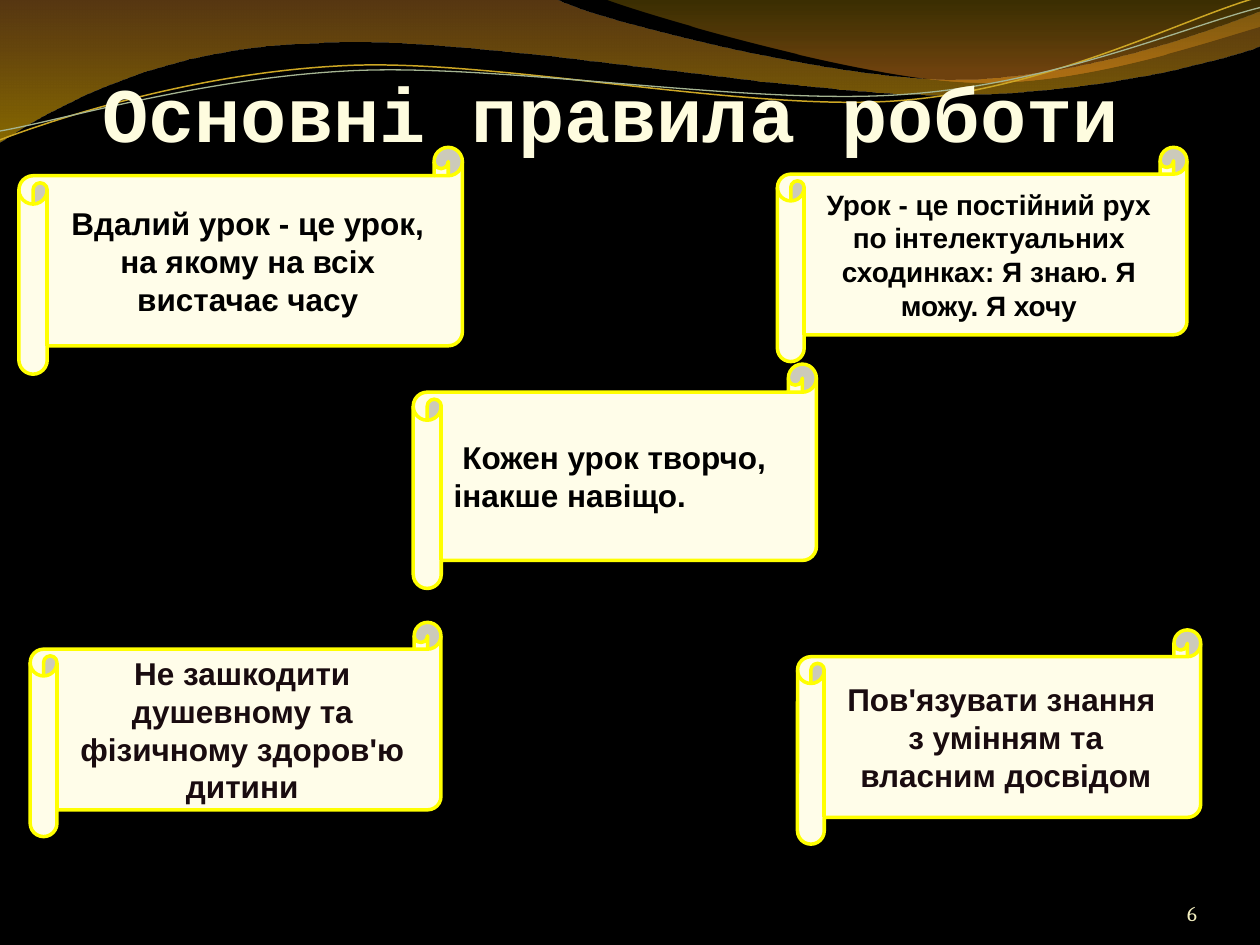
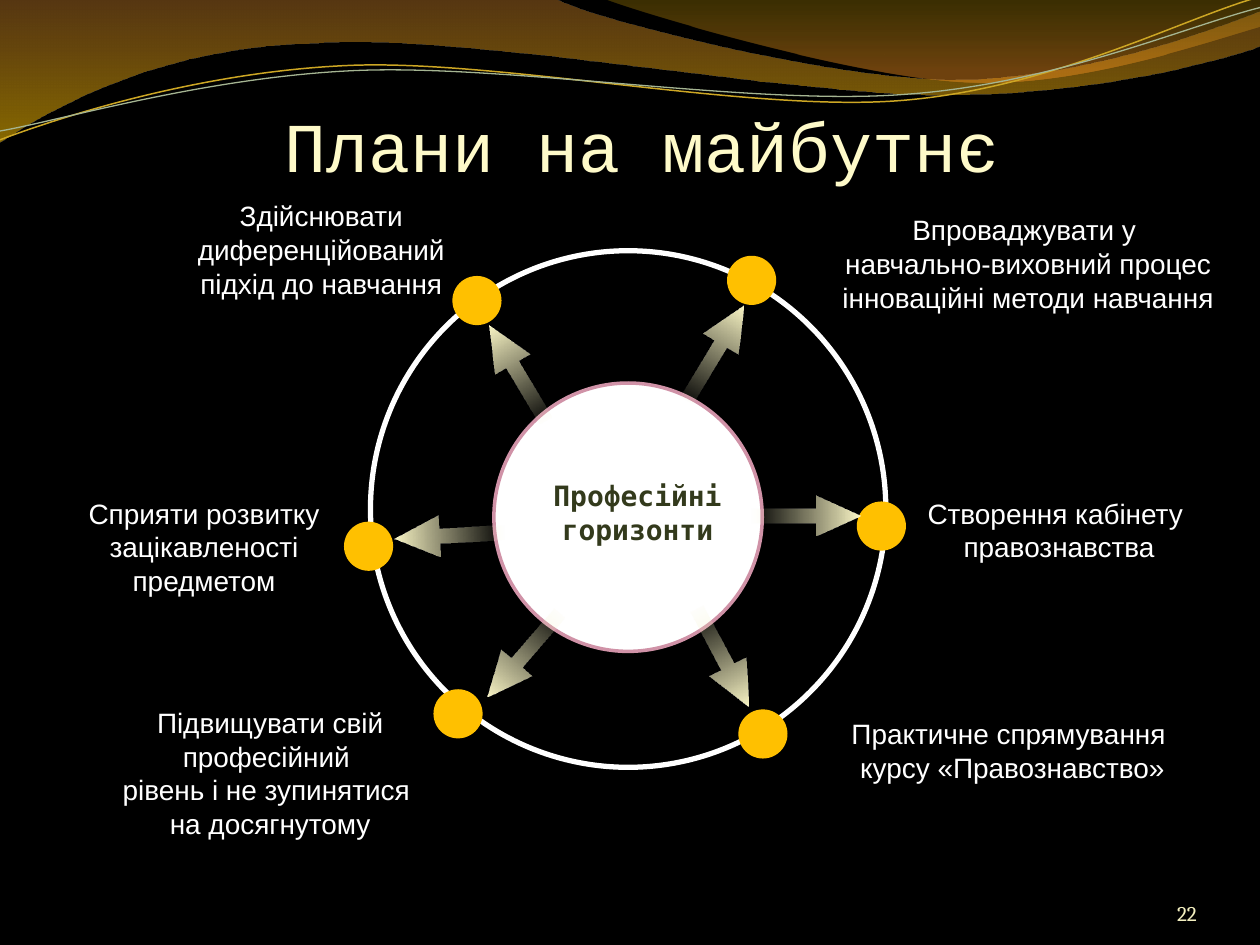
from lxml import etree
from pptx import Presentation
from pptx.dml.color import RGBColor
from pptx.enum.shapes import MSO_SHAPE
from pptx.enum.text import MSO_ANCHOR, MSO_AUTO_SIZE, PP_ALIGN
from pptx.oxml.ns import qn
from pptx.util import Inches, Pt

SCROLL, OVAL, ARROW = MSO_SHAPE.HORIZONTAL_SCROLL, MSO_SHAPE.OVAL, MSO_SHAPE.RIGHT_ARROW
TOP, MIDDLE, BOTTOM = MSO_ANCHOR.TOP, MSO_ANCHOR.MIDDLE, MSO_ANCHOR.BOTTOM
LEFT, CENTER, RIGHT = PP_ALIGN.LEFT, PP_ALIGN.CENTER, PP_ALIGN.RIGHT
FIXED = MSO_AUTO_SIZE.NONE
TITLE_ONLY = 5
FIRST_WAVE_ID = 101

BLACK, WHITE, INK = "000000", "FFFFFF", "190B0F"
PAPER, YELLOW, AMBER = "FFFDE9", "FFFF00", "FFC000"
PINK, OLIVE, PAGE_COLOR = "D092A7", "333A1C", "F3EFC0"
BODY_FONT, TITLE_FONT, PAGE_FONT, HUB_FONT = "Arial", "Courier New", "Cambria", "DejaVu Sans Mono"

WIDE_BAND = [(0, 0), (4.4, -0.01),
             [(4.76, 0.17), (6.64, 0.63), (7.58, 0.63)],
             [(8.53, 0.63), (9.58, 0.26), (10, 0.09)], (10.01, 0.36),
             [(9.83, 0.44), (8.7, 0.76), (7.46, 0.75)],
             [(6.22, 0.75), (3.82, 0.28), (2.57, 0.34)],
             [(1.29, 0.36), (0.46, 0.83), (-0.01, 1.13)], (0, 0)]
RIGHT_BAND = [(4.79, -0.01),
              [(5.09, 0.11), (6.82, 0.62), (7.69, 0.65)],
              [(8.56, 0.69), (9.61, 0.32), (10, 0.21)], (10, 0), (4.79, -0.01)]
GOLD_WAVE = [(0, 1.11),
             [(0.48, 0.93), (1.58, 0.57), (2.77, 0.52)],
             [(3.95, 0.47), (5.93, 0.89), (7.13, 0.8)],
             [(8.33, 0.71), (9.38, 0.15), (9.98, -0.02)]]
GREEN_WAVE = [(0, 1.04),
              [(0.47, 0.96), (1.64, 0.61), (2.83, 0.56)],
              [(4.03, 0.51), (5.97, 0.84), (7.17, 0.75)],
              [(8.36, 0.67), (9.41, 0.21), (10, 0.06)]]
BANDS = [(WIDE_BAND, [(0, "C07A28", 45), (100, "F7BF00", 55)]),
         (RIGHT_BAND, [(0, "C09709", 30), (80, "F59320", 45)])]
WAVES = [(GOLD_WAVE, "CCA624", 0.85), (GREEN_WAVE, "A5B592", 0.75)]

RULES = [
    ((0.15, 1.17, 3.52, 1.8), "Вдалий урок - це урок, на якому на всіх вистачає часу", 18, BLACK, CENTER),
    ((6.17, 1.17, 3.25, 1.7),
     "Урок - це постійний рух по інтелектуальних сходинках: Я знаю. Я можу. Я хочу", 16, BLACK, CENTER),
    ((0.24, 4.94, 3.26, 1.7), "Не зашкодити душевному та фізичному здоров'ю дитини", 18, INK, CENTER),
    ((6.33, 5, 3.2, 1.7), "Пов'язувати знання \nз умінням та власним досвідом", 18, INK, CENTER),
    ((3.28, 2.89, 3.2, 1.78), " Кожен урок творчо, інакше навіщо.", 18, BLACK, LEFT),
]

PLANS = [
    ((0.59, 3.89, 2.06, 0.91), "Сприяти розвитку \nзацікавленості\nпредметом",
     (2.73, 4.14), (3.13, 4.09), 176.6),
    ((6.56, 1.64, 3.2, 0.91), "Впроваджувати у \nнавчально-виховний процес\nінноваційні методи навчання",
     (5.77, 2.03), (5.24, 2.64), 301),
    ((7.25, 3.89, 2.25, 0.64), "Створення кабінету\n правознавства", (6.8, 3.98), (5.96, 3.93), 0),
    ((6.64, 5.64, 2.73, 0.64), "Практичне спрямування\n курсу «Правознавство»",
     (5.86, 5.63), (5.3, 5.06), 62.4),
    ((0.78, 5.55, 2.73, 1.18), "Підвищувати свій професійний \nрівень і не зупинятися \nна досягнутому",
     (3.44, 5.47), (3.72, 5.04), 130.7),
    ((1.3, 1.53, 2.5, 0.91), "Здійснювати диференційований підхід до навчання",
     (3.59, 2.19), (3.67, 2.8), 239.5),
]


def color(hex_code):
    """Turn a hex string into a colour."""
    return RGBColor.from_string(hex_code)


def inches(values):
    """Convert a sequence of numbers to inches."""
    return [Inches(value) for value in values]


def paint(shape, fill=None, line=None, width=1):
    """Set solid fill and outline, and remove the shadow."""
    shape.shadow.inherit = False
    if fill:
        shape.fill.solid()
        shape.fill.fore_color.rgb = color(fill)
    else:
        shape.fill.background()
    if line:
        shape.line.color.rgb = color(line)
        shape.line.width = Pt(width)
    else:
        shape.line.fill.background()


def fade(shape, stops, angle):
    """Fill a shape with a gradient of (position, colour, opacity) stops."""
    paint(shape, WHITE)
    gradient = etree.Element(qn("a:gradFill"), rotWithShape="1")
    stop_list = etree.SubElement(gradient, qn("a:gsLst"))
    for position, hex_code, opacity in stops:
        stop = etree.SubElement(stop_list, qn("a:gs"), pos=str(position * 1000))
        tint = etree.SubElement(stop, qn("a:srgbClr"), val=hex_code)
        etree.SubElement(tint, qn("a:alpha"), val=str(opacity * 1000))
    etree.SubElement(gradient, qn("a:lin"), ang=str(angle * 60000), scaled="0")
    properties = shape.element.spPr
    properties.replace(properties.find(qn("a:solidFill")), gradient)


def write(shape, text, size, hex_code, font=BODY_FONT, bold=False, align=CENTER, anchor=TOP, margins=None):
    """Write one paragraph per line of text with a common style."""
    frame = shape.text_frame
    frame.word_wrap = True
    frame.auto_size = FIXED
    frame.vertical_anchor = anchor
    if margins:
        (frame.margin_left, frame.margin_top,
         frame.margin_right, frame.margin_bottom) = inches(margins)
    frame.text = text
    for paragraph in frame.paragraphs:
        paragraph.alignment = align
        paragraph.font.name = font
        paragraph.font.size = Pt(size)
        paragraph.font.bold = bold
        paragraph.font.color.rgb = color(hex_code)


def add_label(slide, box, text, size, hex_code, **style):
    """Add a text box."""
    write(slide.shapes.add_textbox(*inches(box)), text, size, hex_code, **style)


def add_outline(slide, outline, close):
    """Draw a freeform of corners (tuples) and Bezier curves (lists of three points)."""
    start, *parts = outline
    groups = [part if isinstance(part, list) else [part] for part in parts]
    builder = slide.shapes.build_freeform(*inches(start))
    builder.add_line_segments([inches(point) for group in groups for point in group], close=close)
    shape = builder.convert_to_shape()
    segments = iter(list(shape.element.iter(qn("a:lnTo"))))
    for group in groups:
        first, *others = [next(segments) for _ in group]
        if others:
            first.tag = qn("a:cubicBezTo")
            for segment in others:
                first.append(segment[0])
                segment.getparent().remove(segment)
    return shape


def add_header_waves(slide, master):
    """Draw the gradient bands and thin waves, and hand them to the master."""
    decorations = []
    for outline, stops in BANDS:
        band = add_outline(slide, outline, True)
        fade(band, stops, 90)
        decorations.append(band)
    for outline, hex_code, width in WAVES:
        wave = add_outline(slide, outline, False)
        paint(wave, line=hex_code, width=width)
        decorations.append(wave)
    for shape_id, decoration in enumerate(decorations, FIRST_WAVE_ID):
        decoration.element.nvSpPr.cNvPr.set("id", str(shape_id))
        master.shapes.element.append(decoration.element)


def start_slide(deck, title_text, left, top, size, hex_code, bold, page):
    """Add a slide with title and page number."""
    slide = deck.slides.add_slide(deck.slide_layouts[TITLE_ONLY])
    title = slide.shapes.title
    title.left, title.top, title.width, title.height = inches((left, top, 9.08, 1.25))
    write(title, title_text, size, hex_code, font=TITLE_FONT, bold=bold, anchor=BOTTOM, margins=(0, 0.05, 0, 0))
    add_label(slide, (8.67, 6.95, 0.83, 0.4), page, 12, PAGE_COLOR, font=PAGE_FONT,
              align=RIGHT, anchor=BOTTOM, margins=(0, 0, 0, 0))
    return slide


def add_rule(slide, box, text, size, hex_code, align):
    """Add a scroll that carries one rule."""
    scroll = slide.shapes.add_shape(SCROLL, *inches(box))
    paint(scroll, PAPER, YELLOW, 2)
    write(scroll, text, size, hex_code, bold=True, align=align, anchor=MIDDLE)


def add_circle(slide, box, **look):
    """Add an ellipse in the given box."""
    paint(slide.shapes.add_shape(OVAL, *inches(box)), **look)


def add_hub(slide, box):
    """Draw the ring and the central circle with its caption."""
    left, top = box[:2]
    add_circle(slide, box, line=WHITE, width=3)
    add_circle(slide, (left + 0.98, top + 1.05, 2.13, 2.13), fill=WHITE, line=PINK, width=2)
    add_label(slide, (left + 1.32, top + 1.76, 1.6, 0.64), "Професійні горизонти", 16, OLIVE,
              font=HUB_FONT, bold=True)


def add_plan(slide, label_box, text, dot_corner, arrow_corner, angle):
    """Add one plan: its dot on the ring, the arrow to it and its label."""
    add_circle(slide, (*dot_corner, 0.39, 0.39), fill=AMBER)
    arrow = slide.shapes.add_shape(ARROW, *inches((*arrow_corner, 0.87, 0.32)))
    arrow.adjustments[0], arrow.adjustments[1] = 0.35, 1.11
    arrow.rotation = angle
    fade(arrow, [(0, "F1EEBF", 0), (100, "FEFAC9", 100)], 0)
    add_label(slide, label_box, text, 16, WHITE)


def build_rules_slide(deck):
    """Build the slide with the rules of work."""
    slide = start_slide(deck, "Основні правила роботи", 0.31, 0, 44, "FEFCDF", True, "6")
    for rule in RULES:
        add_rule(slide, *rule)
    return slide


def build_plans_slide(deck):
    """Build the slide with the plans around the hub."""
    slide = start_slide(deck, "Плани на майбутнє", 0.55, 0.23, 40, "FEFAC9", False, "22")
    add_hub(slide, (2.94, 1.99, 4.09, 4.1))
    for plan in PLANS:
        add_plan(slide, *plan)


def main():
    """Build and save the presentation."""
    deck = Presentation()
    deck.slide_width, deck.slide_height = inches((10, 7.5))
    background = deck.slide_master.background.fill
    background.solid()
    background.fore_color.rgb = color(BLACK)
    rules_slide = build_rules_slide(deck)
    add_header_waves(rules_slide, deck.slide_master)
    build_plans_slide(deck)
    deck.save("out.pptx")


if __name__ == "__main__":
    main()
